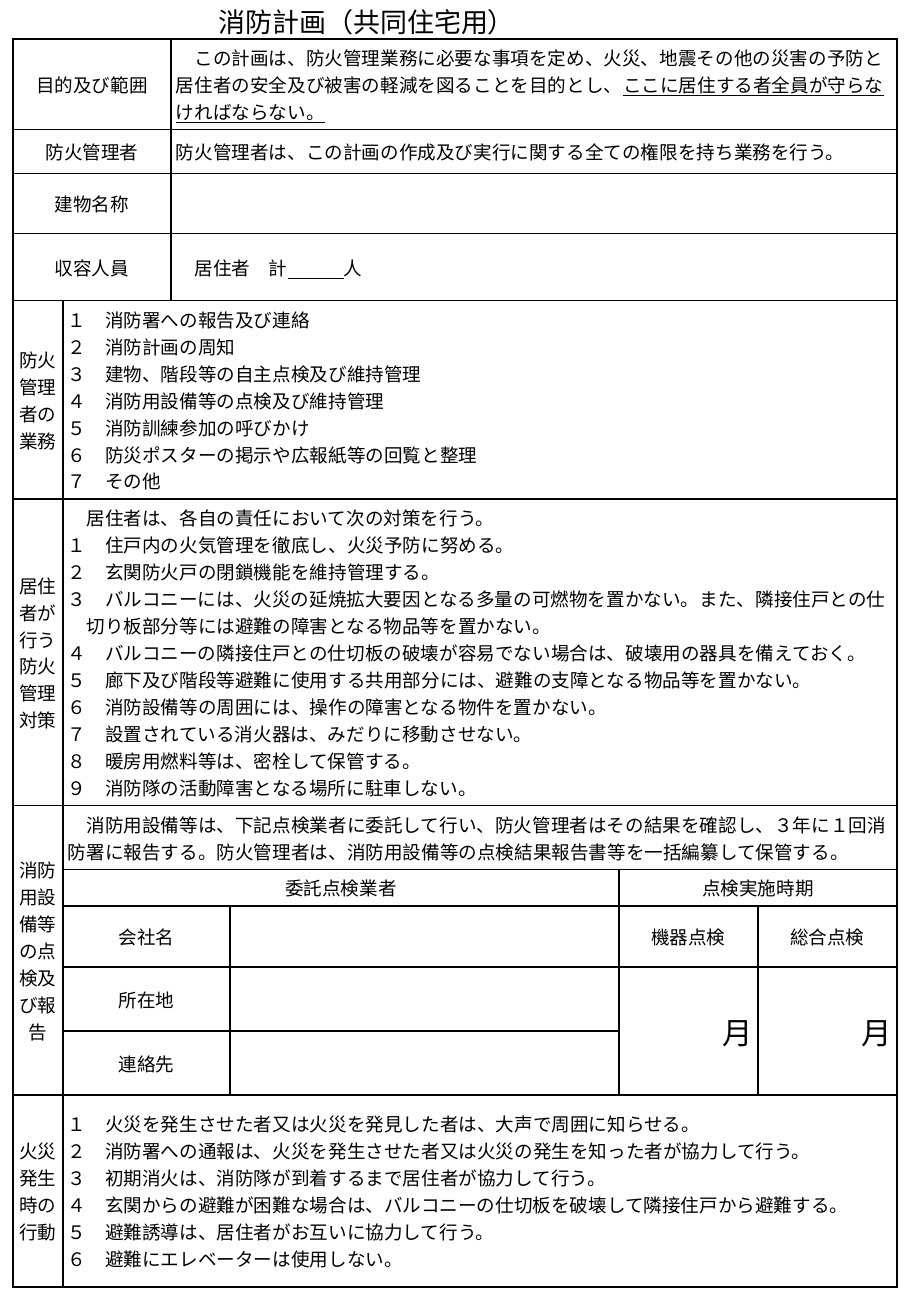
from dataclasses import dataclass

import pptx
import pptx.dml.color
import pptx.enum.text
import pptx.oxml
import pptx.oxml.ns
import pptx.table
import pptx.text.text
import pptx.util

BLACK = pptx.dml.color.RGBColor(0, 0, 0)
EMU_PER_PX = 7526
BORDER_EMU = 12700
CELL_MARGIN = 5
UNDERLINE_MARK = "_"
COLUMN_WIDTHS = (50, 108, 59, 389, 139, 139)
ROW_HEIGHTS = (84, 44, 60, 67, 187, 283, 53, 35, 61, 64, 64, 192)
ALIGN = pptx.enum.text.PP_ALIGN


@dataclass(frozen=True)
class Entry:
    row: int
    column: int
    lines: tuple[str, ...] = ()
    row_span: int = 1
    column_span: int = 1
    align: ALIGN = ALIGN.CENTER
    font: str = "Arial"
    size: int = 11
    vertical: bool = False


def label(row: int, text: str) -> Entry:
    return Entry(row, 0, (text,), column_span=2)


def side_heading(row: int, text: str, row_span: int = 1) -> Entry:
    return Entry(row, 0, (text,), row_span=row_span, vertical=True)


def details(row: int, column: int, *lines: str, font: str = "Arial") -> Entry:
    return Entry(row, column, lines, column_span=len(COLUMN_WIDTHS) - column,
                 align=ALIGN.LEFT, font=font)


def month(column: int) -> Entry:
    return Entry(9, column, ("月",), row_span=2, align=ALIGN.RIGHT, font="Calibri", size=18)


ENTRIES = (
    label(0, "目的及び範囲"),
    details(0, 2, "　この計画は、防火管理業務に必要な事項を定め、火災、地震その他の災害の予防と"
            "居住者の安全及び被害の軽減を図ることを目的とし、"
            "_ここに居住する者全員が守らなければならない。_", font="Calibri"),
    label(1, "防火管理者"),
    details(1, 2, "防火管理者は、この計画の作成及び実行に関する全ての権限を持ち業務を行う。",
            font="Calibri"),
    label(2, "建物名称"),
    details(2, 2),
    label(3, "収容人員"),
    details(3, 2, "　居住者　計_　　　_人"),
    side_heading(4, "防火管理者の業務"),
    details(
        4, 1,
        "１　消防署への報告及び連絡",
        "２　消防計画の周知",
        "３　建物、階段等の自主点検及び維持管理",
        "４　消防用設備等の点検及び維持管理",
        "５　消防訓練参加の呼びかけ",
        "６　防災ポスターの掲示や広報紙等の回覧と整理",
        "７　その他",
    ),
    side_heading(5, "居住者が行う防火管理対策"),
    details(
        5, 1,
        "　居住者は、各自の責任において次の対策を行う。",
        "１　住戸内の火気管理を徹底し、火災予防に努める。",
        "２　玄関防火戸の閉鎖機能を維持管理する。",
        "３　バルコニーには、火災の延焼拡大要因となる多量の可燃物を置かない。また、隣接住戸との仕",
        "　切り板部分等には避難の障害となる物品等を置かない。",
        "４　バルコニーの隣接住戸との仕切板の破壊が容易でない場合は、破壊用の器具を備えておく。",
        "５　廊下及び階段等避難に使用する共用部分には、避難の支障となる物品等を置かない。",
        "６　消防設備等の周囲には、操作の障害となる物件を置かない。",
        "７　設置されている消火器は、みだりに移動させない。",
        "８　暖房用燃料等は、密栓して保管する。",
        "９　消防隊の活動障害となる場所に駐車しない。",
    ),
    side_heading(6, "消防用設備等の点検及び報告", row_span=5),
    details(6, 1, "　消防用設備等は、下記点検業者に委託して行い、防火管理者はその結果を確認し、"
            "３年に１回消防署に報告する。防火管理者は、消防用設備等の点検結果報告書等を"
            "一括編纂して保管する。"),
    Entry(7, 1, ("委託点検業者",), column_span=3),
    Entry(7, 4, ("点検実施時期",), column_span=2),
    Entry(8, 1, ("会社名",), column_span=2),
    Entry(8, 4, ("機器点検",)),
    Entry(8, 5, ("総合点検",)),
    Entry(9, 1, ("所在地",), column_span=2),
    month(4),
    month(5),
    Entry(10, 1, ("連絡先",), column_span=2),
    side_heading(11, "火災発生時の行動"),
    details(
        11, 1,
        "１　火災を発生させた者又は火災を発見した者は、大声で周囲に知らせる。",
        "２　消防署への通報は、火災を発生させた者又は火災の発生を知った者が協力して行う。",
        "３　初期消火は、消防隊が到着するまで居住者が協力して行う。",
        "４　玄関からの避難が困難な場合は、バルコニーの仕切板を破壊して隣接住戸から避難する。",
        "５　避難誘導は、居住者がお互いに協力して行う。",
        "６　避難にエレベーターは使用しない。",
    ),
)


def px(length: int) -> pptx.util.Emu:
    return pptx.util.Emu(length * EMU_PER_PX)


def write_lines(frame: pptx.text.text.TextFrame, lines: tuple[str, ...],
                align: ALIGN, font: str, size: int) -> None:
    for index, line in enumerate(lines):
        para = frame.add_paragraph() if index else frame.paragraphs[0]
        para.alignment = align
        for part, text in enumerate(line.split(UNDERLINE_MARK)):
            if not text:
                continue
            span = para.add_run()
            span.text = text
            span.font.name = font
            span.font.size = pptx.util.Pt(size)
            span.font.color.rgb = BLACK
            if part % 2:
                span.font.underline = True


def style_cell(cell: pptx.table._Cell) -> None:
    properties = cell._tc.get_or_add_tcPr()
    for side in ("lnL", "lnR", "lnT", "lnB"):
        properties.append(pptx.oxml.parse_xml(
            f'<a:{side} {pptx.oxml.ns.nsdecls("a")} w="{BORDER_EMU}">'
            f'<a:solidFill><a:srgbClr val="{BLACK}"/></a:solidFill></a:{side}>'))
    cell.fill.background()
    cell.margin_left = cell.margin_right = px(CELL_MARGIN)
    cell.margin_top = cell.margin_bottom = px(CELL_MARGIN)
    cell.vertical_anchor = pptx.enum.text.MSO_ANCHOR.MIDDLE


def fill_entry(grid: pptx.table.Table, entry: Entry) -> None:
    cell = grid.cell(entry.row, entry.column)
    if entry.row_span > 1 or entry.column_span > 1:
        cell.merge(grid.cell(entry.row + entry.row_span - 1,
                             entry.column + entry.column_span - 1))
    if entry.vertical:
        cell._tc.get_or_add_tcPr().set("vert", "eaVert")
    write_lines(cell.text_frame, entry.lines, entry.align, entry.font, entry.size)


def main() -> None:
    deck = pptx.Presentation()
    deck.slide_width, deck.slide_height = px(911), px(1316)
    page = deck.slides.add_slide(deck.slide_layouts[6])

    grid = page.shapes.add_table(
        len(ROW_HEIGHTS), len(COLUMN_WIDTHS), px(13), px(39),
        px(sum(COLUMN_WIDTHS)), px(sum(ROW_HEIGHTS))).table
    grid.first_row = grid.horz_banding = False
    for column, width in zip(grid.columns, COLUMN_WIDTHS):
        column.width = px(width)
    for row, height in zip(grid.rows, ROW_HEIGHTS):
        row.height = px(height)
    for cell in grid.iter_cells():
        style_cell(cell)
    for entry in ENTRIES:
        fill_entry(grid, entry)

    title_box = page.shapes.add_textbox(px(207), px(0), px(498), px(78))
    title_box.text_frame.word_wrap = True
    title_box.text_frame.auto_size = pptx.enum.text.MSO_AUTO_SIZE.SHAPE_TO_FIT_TEXT
    write_lines(title_box.text_frame, ("消防計画（共同住宅用）",), ALIGN.JUSTIFY, "Calibri", 16)

    deck.save("out.pptx")


if __name__ == "__main__":
    main()
